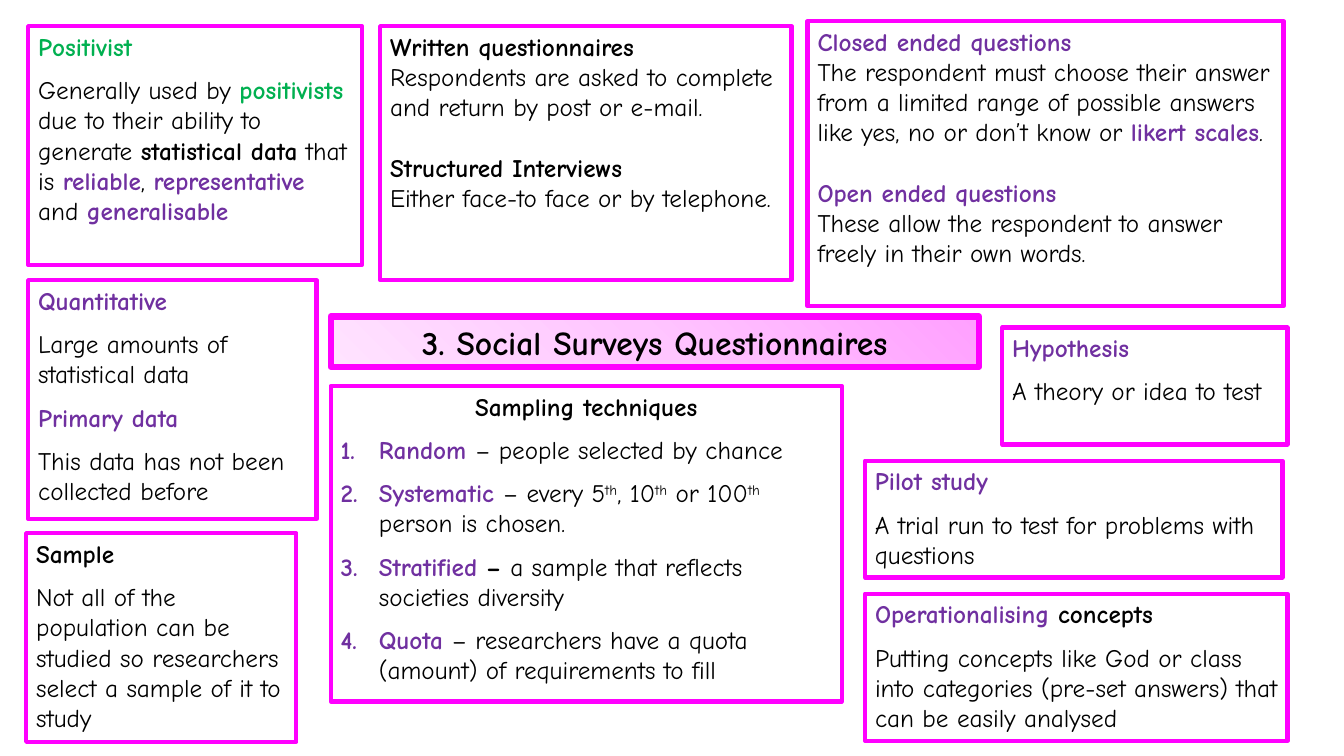
from copy import deepcopy
from lxml.etree import SubElement
from pptx import Presentation
from pptx.dml.color import RGBColor
from pptx.enum.shapes import MSO_SHAPE
from pptx.enum.text import MSO_ANCHOR, PP_ALIGN
from pptx.oxml.ns import qn
from pptx.util import Inches, Pt

FONT = "Comic Neue"
HEX = {"black": "000000", "green": "00B050", "purple": "7030A0", "pink": "FF00FF",
       "deep": "FFA0FF", "mid": "FFC5FF", "pale": "FFE3FF"}
# Run styles: colour, bold, raised
STYLES = {"text": ("black", False, False), "bold": ("black", True, False),
          "green": ("green", True, False), "key": ("purple", True, False),
          "sup": ("black", False, True)}
# Points before a heading and before body text
LOOSE, TIGHT = (9.3, 9.3), (21.6, 0)


def add_box(place, width):
    box = slide.shapes.add_shape(MSO_SHAPE.RECTANGLE, *[Inches(n) for n in place])
    box.shadow.inherit = False
    box.fill.background()
    box.line.color.rgb = RGBColor.from_string(HEX["pink"])
    box.line.width = Pt(width)
    box.text_frame.word_wrap = True
    box.text_frame.vertical_anchor = MSO_ANCHOR.TOP
    return box


def add_runs(para, runs, size=18):
    para.alignment = PP_ALIGN.LEFT
    for text, style in runs:
        color, bold, raised = STYLES[style]
        run = para.add_run()
        run.text = text
        run.font.name = FONT
        run.font.size = Pt(size)
        run.font.bold = bold
        run.font.color.rgb = RGBColor.from_string(HEX[color])
        if raised:
            run.font._element.set("baseline", "30000")


deck = Presentation()
deck.slide_width, deck.slide_height = Inches(13.33), Inches(7.5)
slide = deck.slides.add_slide(deck.slide_layouts[6])

# Title bar with a three-stop gradient
title = add_box((3.28, 3.14, 6.43, 0.5), 4.5)
title.text_frame.vertical_anchor = MSO_ANCHOR.MIDDLE
title.fill.gradient()
title.fill.gradient_angle = 225
stops = title._element.spPr.find(qn("a:gradFill")).find(qn("a:gsLst"))
stops.insert(1, deepcopy(stops[0]))
for stop, spot, name in zip(title.fill.gradient_stops, (0, 0.5, 1), ("deep", "mid", "pale")):
    stop.position = spot
    stop.color.rgb = RGBColor.from_string(HEX[name])
head = title.text_frame.paragraphs[0]
add_runs(head, [("3. Social Surveys Questionnaires", "bold")], 24)
head.alignment = PP_ALIGN.CENTER

# Note boxes: place, spacing, paragraphs of runs
notes = [
    ((3.77, 0.26, 4.08, 2.52), TIGHT, [
        [("Written questionnaires", "bold")],
        [("Respondents are asked to complete and return by post or e-mail.", "text")],
        [("Structured Interviews", "bold")],
        [("Either face-to face or by telephone.", "text")]]),
    ((0.28, 0.26, 3.31, 2.37), LOOSE, [
        [("Positivist", "green")],
        [("Generally used by ", "text"), ("positivists", "green"),
         (" due to their ability to generate ", "text"), ("statistical data", "bold"),
         (" that is ", "text"), ("reliable", "key"), (", ", "text"),
         ("representative", "key"), (" and ", "text"), ("generalisable", "key")]]),
    ((0.28, 2.78, 2.86, 2.37), LOOSE, [
        [("Quantitative", "key")],
        [("Large amounts of statistical data", "text")],
        [("Primary data", "key")],
        [("This data has not been collected before", "text")]]),
    ((8.01, 0.21, 4.72, 2.83), TIGHT, [
        [("Closed ended questions", "key")],
        [("The respondent must choose their answer from a limited range of possible "
          "answers like yes, no or don’t know or ", "text"),
         ("likert scales", "key"), (".", "text")],
        [("Open ended questions", "key")],
        [("These allow the respondent to answer freely in their own words.", "text")]]),
    ((9.94, 3.25, 2.83, 1.16), LOOSE, [
        [("Hypothesis", "key")],
        [("A theory or idea to test", "text")]]),
    ((8.58, 4.57, 4.14, 1.16), LOOSE, [
        [("Pilot study", "key")],
        [("A trial run to test for problems with questions", "text")]]),
    ((8.58, 5.89, 4.19, 1.46), LOOSE, [
        [("Operationalising", "key"), (" concepts", "bold")],
        [("Putting concepts like God or class into categories (pre-set answers) "
          "that can be easily analysed", "text")]]),
    ((0.26, 5.29, 2.68, 2.07), LOOSE, [
        [("Sample", "bold")],
        [("Not all of the population can be studied so researchers select "
          "a sample of it to study", "text")]]),
    ((3.28, 3.83, 5.07, 3.13), LOOSE, [
        [("Sampling techniques", "bold")],
        [("Random ", "key"), ("– people selected by chance", "text")],
        [("Systematic ", "key"), ("– every 5", "text"), ("th", "sup"), (", 10", "text"),
         ("th", "sup"), (" or 100", "text"), ("th", "sup"), (" person is chosen.", "text")],
        [("Stratified", "key"), (" –", "bold"),
         (" a sample that reflects societies diversity", "text")],
        [("Quota ", "key"),
         ("– researchers have a quota (amount) of requirements to fill", "text")]]),
]
for place, gaps, paras in notes:
    frame = add_box(place, 3).text_frame
    for i, runs in enumerate(paras):
        para = frame.add_paragraph() if i else frame.paragraphs[0]
        add_runs(para, runs)
        if i:
            para.space_before = Pt(gaps[0] if STYLES[runs[0][1]][1] else gaps[1])

# Sampling list, the last box: centred heading, numbered items
first, *items = frame.paragraphs
first.alignment = PP_ALIGN.CENTER
for item in items:
    props = item._p.get_or_add_pPr()
    props.set("marL", str(Inches(0.38)))
    props.set("indent", str(-Inches(0.38)))
    SubElement(props, qn("a:buFont"), typeface="+mj-lt")
    SubElement(props, qn("a:buAutoNum"), type="arabicPeriod")

deck.save("out.pptx")
